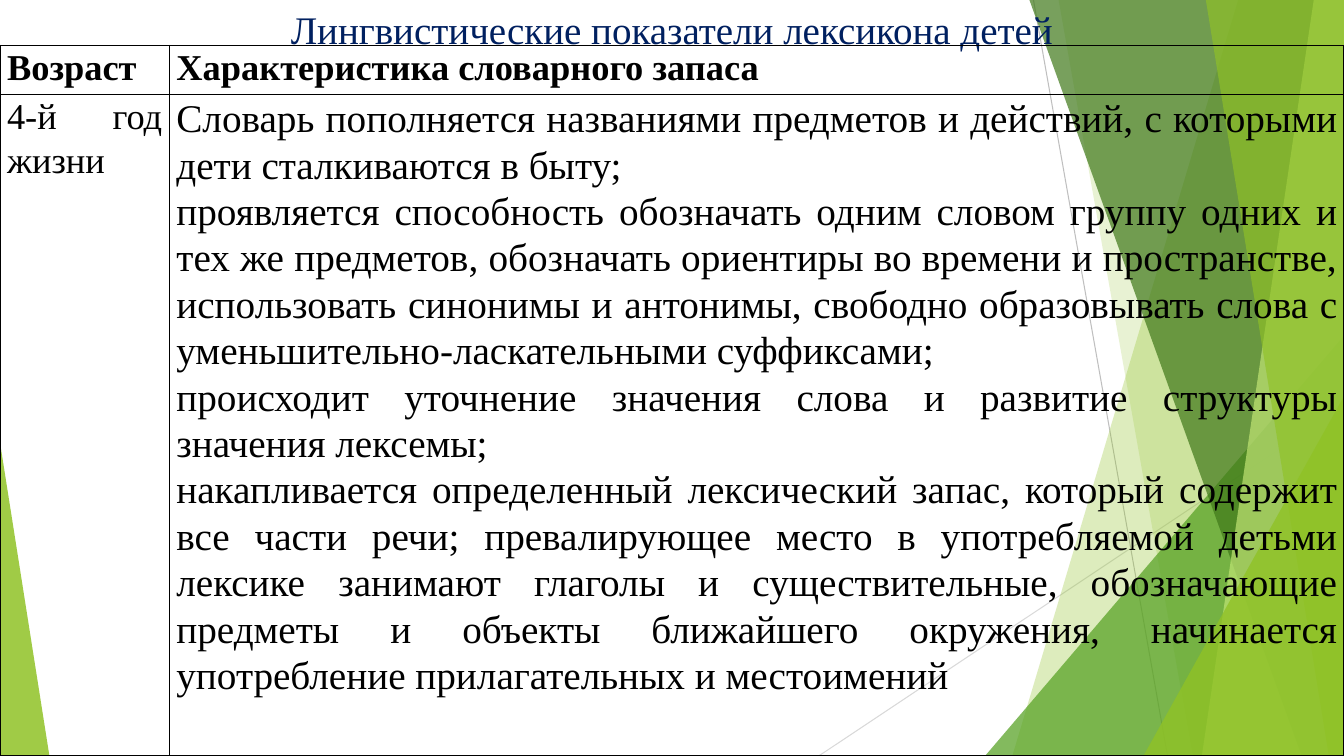
import pptx
import pptx.util
import pptx.dml.color
import pptx.enum.shapes
import pptx.enum.text
import pptx.oxml
import pptx.oxml.ns
import lxml.etree
from pptx.util import Inches

WIDTH, HEIGHT = 13.33, 7.5
FONT = "Times New Roman"


def color(hex_string):
    return pptx.dml.color.RGBColor.from_string(hex_string)


def paint(shape, fill, opacity):
    """Fill a shape with a translucent colour, without outline or shadow."""
    shape.shadow.inherit = False
    shape.line.fill.background()
    shape.fill.solid()
    shape.fill.fore_color.rgb = color(fill)
    srgb = shape._element.spPr.find(".//" + pptx.oxml.ns.qn("a:srgbClr"))
    alpha = lxml.etree.SubElement(srgb, pptx.oxml.ns.qn("a:alpha"))
    alpha.set("val", str(opacity * 1000))


presentation = pptx.Presentation()
presentation.slide_width = Inches(WIDTH)
presentation.slide_height = Inches(HEIGHT)
slide = presentation.slides.add_slide(presentation.slide_layouts[6])
shapes = slide.shapes

# Thin background lines
for x1, y1, x2, y2, line_color in [
    (10.25, 0, 11.58, HEIGHT, "BFBFBF"),
    (WIDTH, 4.03, 8.12, HEIGHT, "D9D9D9"),
]:
    line = shapes.add_connector(
        pptx.enum.shapes.MSO_CONNECTOR.STRAIGHT,
        Inches(x1), Inches(y1), Inches(x2), Inches(y2))
    line.line.color.rgb = color(line_color)
    line.line.width = pptx.util.Pt(0.75)
    lxml.etree.SubElement(line._element.spPr, pptx.oxml.ns.qn("a:effectLst"))

# Green facets: bands run to the right edge, triangles stand on the bottom edge
facets = [
    ("band", 12.28, 10.04, "90C226", 30),
    ("band", 10.5, 11.83, "90C226", 20),
    ("triangle", 9.77, 3.33, "54A021", 72),
    ("band", 10.21, 12.91, "3F7819", 70),
    ("band", 13.03, 11.92, "C0E474", 70),
    ("band", 11.96, 13.18, "90C226", 65),
    ("triangle", 11.34, 3.93, "90C226", 80),
    ("triangle", 0, 4.39, "90C226", 85),
]
for kind, first, second, fill, opacity in facets:
    if kind == "band":
        top_x, bottom_x = first, second
        builder = shapes.build_freeform(Inches(top_x), 0)
        builder.add_line_segments([
            (Inches(WIDTH), 0), (Inches(WIDTH), Inches(HEIGHT)),
            (Inches(bottom_x), Inches(HEIGHT))], close=True)
        facet = builder.convert_to_shape()
    else:
        left, top = first, second
        width = WIDTH - left if left else 0.49
        facet = shapes.add_shape(
            pptx.enum.shapes.MSO_SHAPE.ISOSCELES_TRIANGLE,
            Inches(left), Inches(top), Inches(width), Inches(HEIGHT - top))
        facet.adjustments[0] = 1 if left else 0
    paint(facet, fill, opacity)

# Title
title = shapes.add_textbox(0, 0, Inches(WIDTH), Inches(0.45))
title.text_frame.word_wrap = True
paragraph = title.text_frame.paragraphs[0]
paragraph.alignment = pptx.enum.text.PP_ALIGN.CENTER
run = paragraph.add_run()
run.text = "Лингвистические показатели лексикона детей"
run.font.name = FONT
run.font.size = pptx.util.Pt(27.9)
run.font.color.rgb = color("002060")

# Table: each cell is (size, bold, paragraphs)
rows = [
    [(26, True, ["Возраст"]),
     (26, True, ["Характеристика словарного запаса"])],
    [(26, False, ["4-й год жизни"]),
     (28, False, [
         "Словарь пополняется названиями предметов и действий, с которыми "
         "дети сталкиваются в быту;",
         "проявляется способность обозначать одним словом группу одних и тех "
         "же предметов, обозначать ориентиры во времени и пространстве, "
         "использовать синонимы и антонимы, свободно образовывать слова с "
         "уменьшительно-ласкательными суффиксами;",
         "происходит уточнение значения слова и развитие структуры значения "
         "лексемы;",
         "накапливается определенный лексический запас, который содержит все "
         "части речи; превалирующее место в употребляемой детьми лексике "
         "занимают глаголы и существительные, обозначающие предметы и объекты "
         "ближайшего окружения, начинается употребление прилагательных и "
         "местоимений"])],
]
table = shapes.add_table(
    2, 2, 0, Inches(0.45), Inches(WIDTH), Inches(7.05)).table
table.first_row = False
table.horz_banding = False
for column, width in zip(table.columns, (1.68, 11.65)):
    column.width = Inches(width)
for row, height in zip(table.rows, (0.49, 6.56)):
    row.height = Inches(height)

for row_index, row in enumerate(rows):
    for column_index, (size, bold, texts) in enumerate(row):
        cell = table.cell(row_index, column_index)
        cell.margin_left = cell.margin_right = Inches(0.07)
        cell.margin_top = cell.margin_bottom = 0
        properties = cell._tc.get_or_add_tcPr()
        for side in ("lnL", "lnR", "lnT", "lnB"):
            properties.append(pptx.oxml.parse_xml(
                f'<a:{side} {pptx.oxml.ns.nsdecls("a")} w="12700"><a:solidFill>'
                f'<a:srgbClr val="000000"/></a:solidFill></a:{side}>'))
        cell.fill.background()
        for index, text in enumerate(texts):
            frame = cell.text_frame
            paragraph = frame.add_paragraph() if index else frame.paragraphs[0]
            paragraph.alignment = pptx.enum.text.PP_ALIGN.JUSTIFY
            paragraph.line_spacing = 1.07
            run = paragraph.add_run()
            run.text = text
            run.font.name = FONT
            run.font.size = pptx.util.Pt(size)
            run.font.bold = bold
            run.font.color.rgb = color("000000")

presentation.save("out.pptx")
